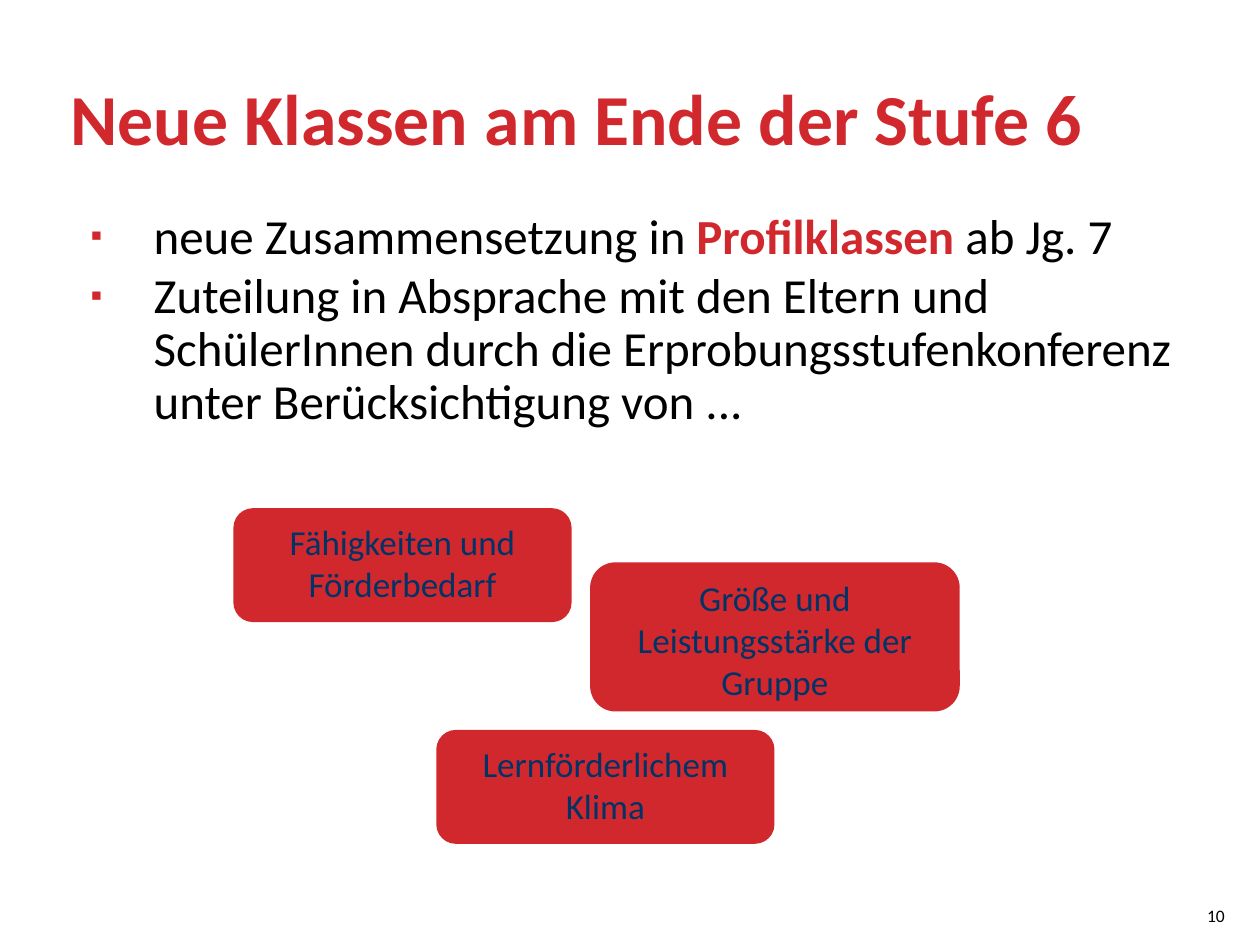
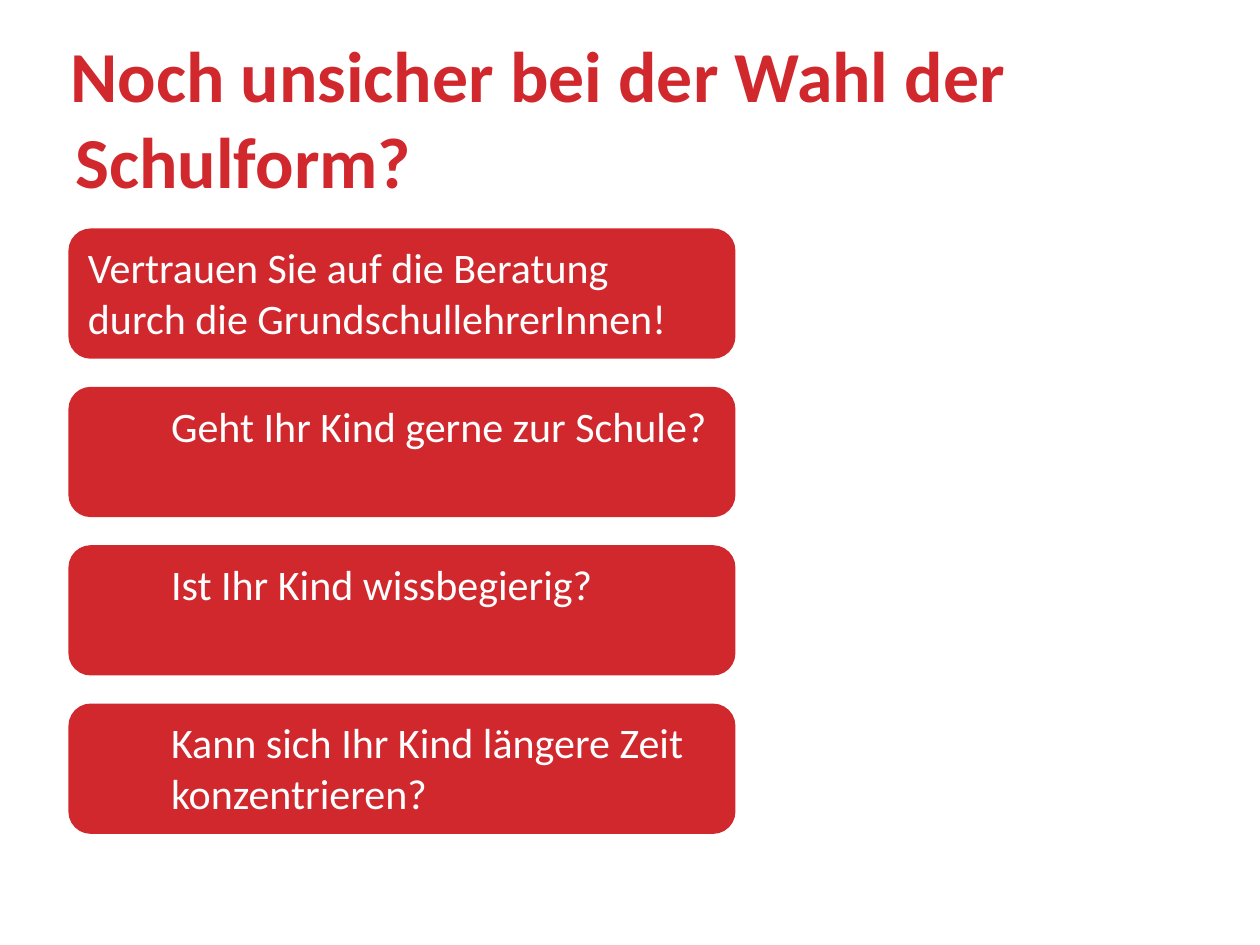
from dataclasses import dataclass

from lxml.etree import SubElement
from pptx import Presentation
from pptx.dml.color import RGBColor
from pptx.enum.shapes import MSO_SHAPE as Preset
from pptx.enum.text import MSO_ANCHOR as Anchor, MSO_AUTO_SIZE as AutoSize, PP_ALIGN as Align
from pptx.oxml.ns import qn
from pptx.util import Inches, Pt

# Shared style
RED, NAVY, BLACK, WHITE = "D1282E", "003366", "000000", "FFFFFF"
FONT = "Calibri"
BULLET_MARGIN, BULLET_INDENT = 0.66, -0.5
TITLE_MARGIN = 0.04

# Grid: 100 columns by 75 rows of a tenth of an inch
COLUMNS, ROWS, CELL = 100, 75, 0.1


@dataclass(frozen=True)
class Area:
    column: float
    row: float
    columns: float
    rows: float

    def box(self) -> list:
        sides = (self.column, self.row, self.columns, self.rows)
        return [Inches(side * CELL) for side in sides]


@dataclass(frozen=True)
class Card:
    text: str
    area: Area
    size: int
    color: str
    align: Align
    bulleted: bool = False


TITLE_AREA = Area(5, 0, 90, 18.5)
BODY_AREA = Area(5, 16.2, 90, 24.5)
NUMBER_AREA = Area(95.2, 71.4, 2.6, 2.6)

# Criteria for the new classes
CRITERIA = [
    Card(text, area, 20, NAVY, Align.CENTER)
    for text, area in (
        ("Fähigkeiten und Förderbedarf", Area(18.6, 40.4, 26.7, 8.9)),
        ("Größe und Leistungsstärke der Gruppe", Area(46.9, 44.7, 29.2, 11.7)),
        ("Lernförderlichem Klima", Area(34.7, 58, 26.7, 8.9)),
    )
]

# Stack of advice cards with equal gaps; the questions are bulleted
ADVICE_TOP, ADVICE_PITCH = 18.2, 12.57
ADVICE = [
    Card(text, Area(5.5, ADVICE_TOP + index * ADVICE_PITCH, 52.8, 10.2),
         24, WHITE, Align.LEFT, bulleted=index > 0)
    for index, text in enumerate((
        "Vertrauen Sie auf die Beratung durch die GrundschullehrerInnen!",
        "Geht Ihr Kind gerne zur Schule?",
        "Ist Ihr Kind wissbegierig?",
        "Kann sich Ihr Kind längere Zeit konzentrieren?",
    ))
]

# Body list: each item is a list of (text, emphasised) pieces
BODY = [
    [("neue Zusammensetzung in ", False), ("Profilklassen", True), (" ab Jg. 7", False)],
    [("Zuteilung in Absprache mit den Eltern und SchülerInnen durch die "
      "Erprobungsstufenkonferenz unter Berücksichtigung von ...", False)],
]


def rgb(color: str) -> RGBColor:
    return RGBColor.from_string(color)


def style_font(run, size: float, color: str, bold: bool = False) -> None:
    font = run.font
    font.name, font.size, font.bold = FONT, Pt(size), bold
    font.color.rgb = rgb(color)


def set_indent(paragraph, margin: float, indent: float) -> None:
    properties = paragraph._p.get_or_add_pPr()
    properties.set("marL", str(Inches(margin)))
    properties.set("indent", str(Inches(indent)))


def add_bullet(paragraph, percent: int = 100) -> None:
    set_indent(paragraph, BULLET_MARGIN, BULLET_INDENT)
    properties = paragraph._p.get_or_add_pPr()
    bullet_color = SubElement(properties, qn("a:buClr"))
    SubElement(bullet_color, qn("a:srgbClr"), val=RED)
    SubElement(properties, qn("a:buSzPct"), val=str(percent * 1000))
    SubElement(properties, qn("a:buFont"), typeface="Arial")
    SubElement(properties, qn("a:buChar"), char="▪")


def place_placeholder(placeholder, area: Area, anchor: Anchor):
    placeholder.left, placeholder.top, placeholder.width, placeholder.height = area.box()
    frame = placeholder.text_frame
    frame.auto_size, frame.word_wrap = AutoSize.NONE, True
    frame.vertical_anchor = anchor
    frame.margin_left = frame.margin_top = frame.margin_bottom = Inches(0.06)
    frame.margin_right = Inches(0.1)
    return frame


def set_title(slide, text: str) -> None:
    frame = place_placeholder(slide.shapes.title, TITLE_AREA, Anchor.MIDDLE)
    frame.text = text
    paragraph = frame.paragraphs[0]
    paragraph.alignment = Align.LEFT
    set_indent(paragraph, TITLE_MARGIN, -TITLE_MARGIN)
    style_font(paragraph.runs[0], 41, RED, bold=True)


def fill_body(slide, items: list) -> None:
    frame = place_placeholder(slide.placeholders[1], BODY_AREA, Anchor.TOP)
    for index, pieces in enumerate(items):
        paragraph = frame.add_paragraph() if index else frame.paragraphs[0]
        paragraph.line_spacing = 0.9
        paragraph.space_before = Pt(4 if index else 0)
        add_bullet(paragraph, percent=68)
        for text, emphasised in pieces:
            run = paragraph.add_run()
            run.text = text
            style_font(run, 28, RED if emphasised else BLACK, emphasised)


def add_card(slide, card: Card) -> None:
    shape = slide.shapes.add_shape(Preset.ROUNDED_RECTANGLE, *card.area.box())
    shape.shadow.inherit = False
    shape.fill.solid()
    shape.fill.fore_color.rgb = shape.line.color.rgb = rgb(RED)
    shape.line.width = Pt(1)
    frame = shape.text_frame
    frame.word_wrap, frame.vertical_anchor = True, Anchor.TOP
    frame.text = card.text
    paragraph = frame.paragraphs[0]
    paragraph.alignment = card.align
    if card.bulleted:
        add_bullet(paragraph)
    style_font(paragraph.runs[0], card.size, card.color)


def add_page_number(slide, number: int) -> None:
    frame = slide.shapes.add_textbox(*NUMBER_AREA.box()).text_frame
    frame.word_wrap, frame.vertical_anchor = False, Anchor.BOTTOM
    # The narrow box has no side margins, so the number stays on one line
    frame.margin_left = frame.margin_right = 0
    frame.text = str(number)
    paragraph = frame.paragraphs[0]
    paragraph.alignment = Align.CENTER
    style_font(paragraph.runs[0], 10, BLACK)


def add_slide(presentation, layout_name: str, title: str, cards: list):
    layout = presentation.slide_layouts.get_by_name(layout_name)
    slide = presentation.slides.add_slide(layout)
    set_title(slide, title)
    for card in cards:
        add_card(slide, card)
    return slide


def main() -> None:
    presentation = Presentation()
    presentation.slide_width = Inches(COLUMNS * CELL)
    presentation.slide_height = Inches(ROWS * CELL)

    # New classes
    classes = add_slide(presentation, "Title and Content",
                        "Neue Klassen am Ende der Stufe 6", CRITERIA)
    fill_body(classes, BODY)
    add_page_number(classes, 10)

    # Choice of school
    add_slide(presentation, "Title Only",
              "Noch unsicher bei der Wahl der Schulform?", ADVICE)

    presentation.save("out.pptx")


if __name__ == "__main__":
    main()
